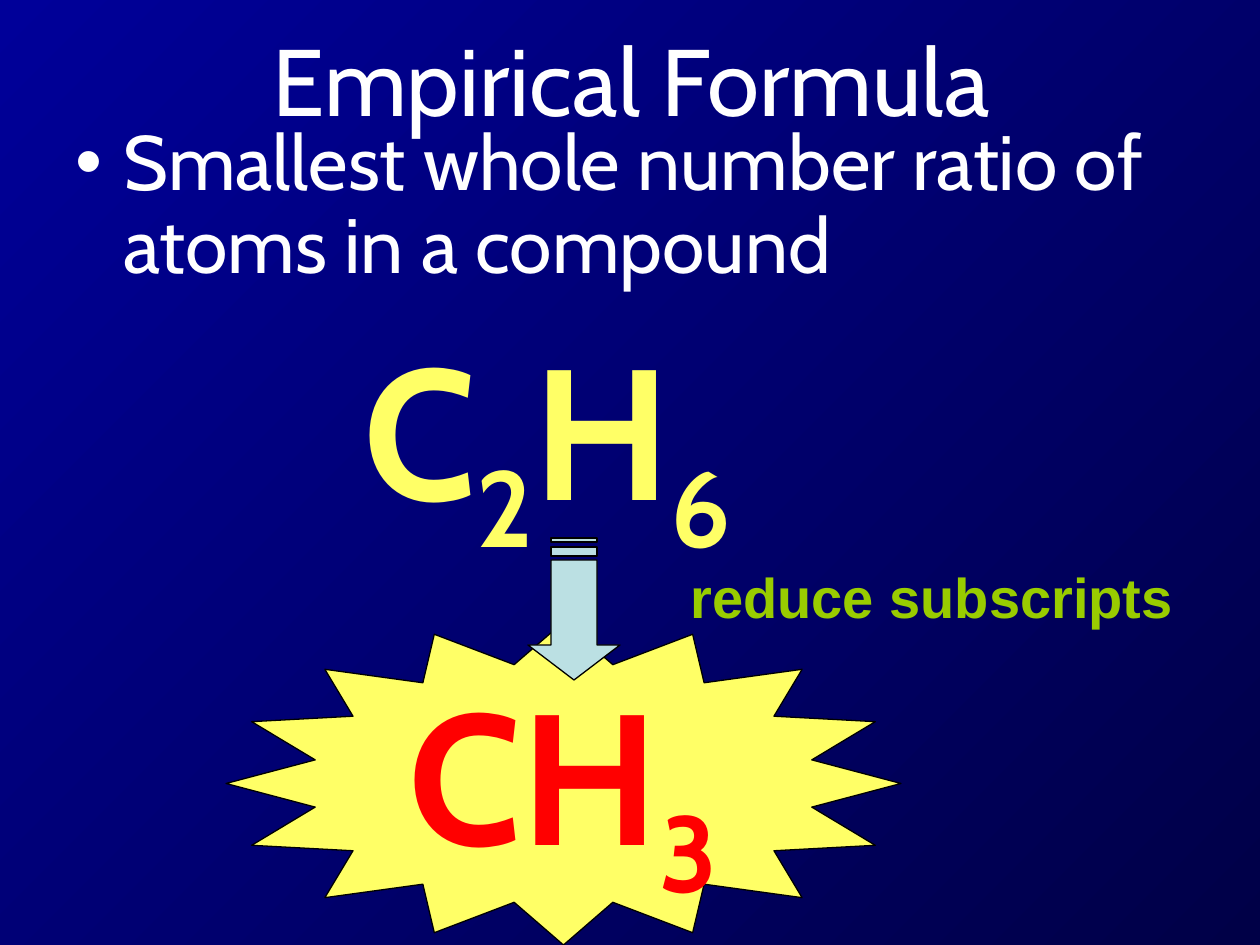
from lxml.etree import SubElement
from pptx import Presentation
from pptx.dml.color import RGBColor
from pptx.enum.shapes import MSO_SHAPE as Shape
from pptx.enum.text import MSO_ANCHOR as Anchor, MSO_AUTO_SIZE as AutoSize, PP_ALIGN as Align
from pptx.oxml.ns import qn
from pptx.util import Emu, Pt

EMU_PER_PX = 914400 / 126
HANGING = 48
COLORS = {
    "sky": "000099", "night": "000047", "white": "FFFFFF", "yellow": "FFFF66",
    "red": "FF0000", "green": "99CC00", "arrow": "BBE0E3", "outline": "000000",
}


def px(length):
    return Emu(round(length * EMU_PER_PX))


def rgb(name):
    return RGBColor.from_string(COLORS[name])


def style_run(run, size, color, face="Cabin", bold=False):
    run.font.size = Pt(size)
    run.font.name = face
    run.font.bold = bold
    run.font.color.rgb = rgb(color)


def style_shape(shape, fill):
    shape.shadow.inherit = False
    shape.fill.solid()
    shape.fill.fore_color.rgb = rgb(fill)
    shape.line.color.rgb = rgb("outline")
    shape.line.width = Pt(0.75)


def hang_indent(paragraph):
    properties = paragraph._p.get_or_add_pPr()
    properties.set("marL", str(px(HANGING)))
    properties.set("indent", str(-px(HANGING)))
    return properties


def paint_background(slide):
    fill = slide.background.fill
    fill.gradient()
    fill.gradient_angle = 315
    for stop, color in zip(fill.gradient_stops, ("sky", "night")):
        stop.color.rgb = rgb(color)


def fill_placeholder(placeholder, box, text, size):
    placeholder.left, placeholder.top, placeholder.width, placeholder.height = map(px, box)
    frame = placeholder.text_frame
    frame.text = text
    frame.word_wrap = True
    frame.auto_size = AutoSize.NONE
    paragraph = frame.paragraphs[0]
    paragraph.space_before = Pt(0)
    style_run(paragraph.runs[0], size, "white")
    return frame


def add_title(slide, text):
    frame = fill_placeholder(slide.shapes.title, (64, 0, 1134, 158), text, 54)
    frame.vertical_anchor = Anchor.MIDDLE
    frame.paragraphs[0].alignment = Align.CENTER


def add_definition(slide, text):
    body = slide.placeholders[1]
    frame = fill_placeholder(body, (63, 118, 1134, 188), text, 44)
    frame.vertical_anchor = Anchor.TOP
    paragraph = frame.paragraphs[0]
    paragraph.line_spacing = 0.9
    SubElement(hang_indent(paragraph), qn("a:buChar")).set("char", "•")
    body.element.getparent().append(body.element)


def add_formula(shapes, box, parts, color):
    frame = shapes.add_textbox(*map(px, box)).text_frame
    frame.word_wrap = True
    paragraph = frame.paragraphs[0]
    paragraph.alignment = Align.CENTER
    hang_indent(paragraph)
    for part in parts:
        run = paragraph.add_run()
        run.text = part
        style_run(run, 106, color, bold=True)
        if part.isdigit():
            run._r.get_or_add_rPr().set("baseline", "-25000")


def add_burst(slide):
    group = slide.shapes.add_group_shape()
    star = group.shapes.add_shape(Shape.STAR_16_POINT, *map(px, (226, 622, 675, 323)))
    star.adjustments[0] = 0.375
    style_shape(star, "yellow")
    add_formula(group.shapes, (370, 654, 386, 260), ("CH", "3"), "red")


def add_striped_arrow(slide, left, top):
    head = [(107, 69), (107, 92), (142, 46), (107, 0), (107, 23)]
    outlines = [[(22, 23), (22, 69), *head]]
    outlines += [[(a, 23), (a, 69), (b, 69), (b, 23)] for a, b in ((9, 18), (0, 4))]
    builder = slide.shapes.build_freeform(*outlines[0][0], scale=EMU_PER_PX)
    for index, outline in enumerate(outlines):
        if index:
            builder.move_to(*outline[0])
        builder.add_line_segments(outline[1:], close=True)
    arrow = builder.convert_to_shape(px(left), px(top))
    style_shape(arrow, "arrow")
    arrow.rotation = 90


def add_caption(slide, text):
    frame = slide.shapes.add_textbox(*map(px, (678, 556, 538, 80))).text_frame
    frame.text = text
    frame.word_wrap = True
    frame.auto_size = AutoSize.SHAPE_TO_FIT_TEXT
    style_run(frame.paragraphs[0].runs[0], 32, "green", "Arial", True)


def main():
    deck = Presentation()
    deck.slide_width, deck.slide_height = px(1260), px(945)
    slide = deck.slides.add_slide(deck.slide_layouts[1])
    paint_background(slide)
    add_title(slide, "Empirical Formula")
    add_formula(slide.shapes, (296, 309, 503, 219), ("C", "2", "H", "6"), "yellow")
    add_burst(slide)
    add_striped_arrow(slide, 503, 563)
    add_caption(slide, "reduce subscripts")
    add_definition(slide, "Smallest whole number ratio of atoms in a compound")
    deck.save("out.pptx")


if __name__ == "__main__":
    main()
